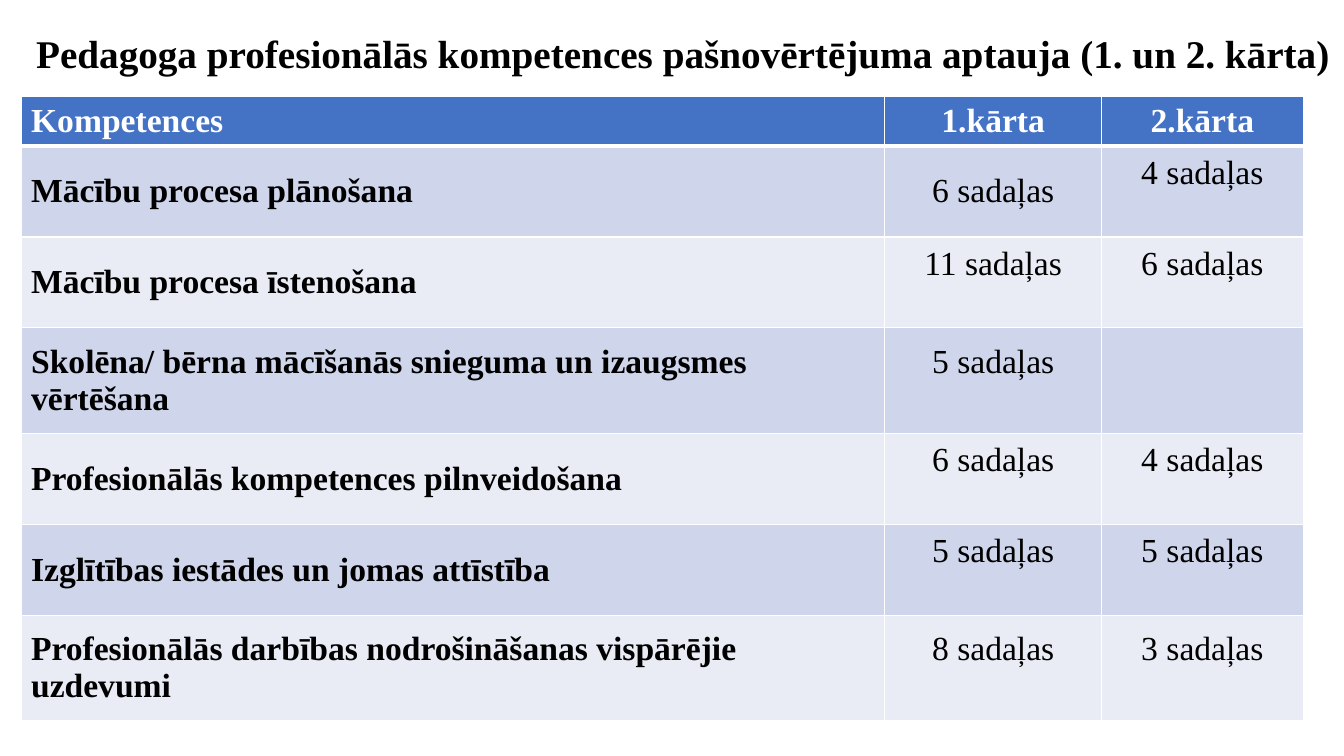
from lxml import etree
from pptx import Presentation
from pptx.dml.color import RGBColor
from pptx.enum.text import MSO_ANCHOR, MSO_AUTO_SIZE, PP_ALIGN
from pptx.oxml.ns import qn
from pptx.util import Cm, Pt

MID = MSO_ANCHOR.MIDDLE
LEFT, CENTER = PP_ALIGN.LEFT, PP_ALIGN.CENTER
FIXED = MSO_AUTO_SIZE.NONE

BLACK, WHITE, BLUE = "000000", "FFFFFF", "4472C4"
BANDS = "CFD5EA", "E9EBF5"
COLS = 21.77, 5.46, 5.08
HEAD, LOW, TALL = 1.26, 2.29, 2.66
LIFT = 1.07  # bottom margin that raises a count above the row's middle

ROWS = [
    ("Kompetences", "1.kārta", "2.kārta"),
    ("Mācību procesa plānošana", "6 sadaļas", "4 sadaļas"),
    ("Mācību procesa īstenošana", "11 sadaļas", "6 sadaļas"),
    ("Skolēna/ bērna mācīšanās snieguma un izaugsmes vērtēšana", "5 sadaļas", ""),
    ("Profesionālās kompetences pilnveidošana", "6 sadaļas", "4 sadaļas"),
    ("Izglītības iestādes un jomas attīstība", "5 sadaļas", "5 sadaļas"),
    ("Profesionālās darbības nodrošināšanas vispārējie uzdevumi",
     "8 sadaļas", "3 sadaļas"),
]
HEIGHTS = HEAD, LOW, LOW, TALL, LOW, LOW, TALL


def rgb(code):
    return RGBColor.from_string(code)


class Deck:
    font = "Times New Roman"

    def __init__(self):
        self.prs = Presentation()
        self.prs.slide_width, self.prs.slide_height = Cm(33.87), Cm(19.05)
        self.slide = self.prs.slides.add_slide(self.prs.slide_layouts[5])

    def label(self, frame, text, size, color, bold, align):
        frame.text = text
        para = frame.paragraphs[0]
        para.alignment = align
        for run in para.runs:
            font = run.font
            font.name, font.size, font.bold = self.font, Pt(size), bold
            font.color.rgb = rgb(color)

    def title(self, text, x, y, w, h):
        box = self.slide.shapes.title
        box.left, box.top, box.width, box.height = Cm(x), Cm(y), Cm(w), Cm(h)
        frame = box.text_frame
        frame.word_wrap, frame.auto_size = False, FIXED
        frame.vertical_anchor = MID
        self.label(frame, text, 28, BLACK, True, CENTER)

    def edge(self, cell, base):
        """Draw white borders round a cell, the bottom one base points wide."""
        props = cell._tc.get_or_add_tcPr()
        for i, side in enumerate("LRTB"):
            width = base if side == "B" else 1
            line = etree.Element(qn("a:ln" + side), w=str(Pt(width)))
            fill = etree.SubElement(line, qn("a:solidFill"))
            etree.SubElement(fill, qn("a:srgbClr"), val=WHITE)
            props.insert(i, line)

    def cell(self, cell, text, r, c):
        head = r == 0
        cell.vertical_anchor = MID
        cell.fill.solid()
        cell.fill.fore_color.rgb = rgb(BLUE if head else BANDS[(r - 1) % 2])
        self.edge(cell, 3 if head else 1)
        if c and not head and (r, c) != (1, 1):
            cell.margin_bottom = Cm(LIFT)
        self.label(cell.text_frame, text, 24, WHITE if head else BLACK,
                   head or c == 0, CENTER if c else LEFT)

    def table(self, rows, x, y, cols, heights):
        grid = self.slide.shapes.add_table(
            len(rows), len(cols), Cm(x), Cm(y),
            Cm(sum(cols)), Cm(sum(heights))).table
        for col, w in zip(grid.columns, cols):
            col.width = Cm(w)
        for r, (row, h) in enumerate(zip(rows, heights)):
            grid.rows[r].height = Cm(h)
            for c, text in enumerate(row):
                self.cell(grid.cell(r, c), text, r, c)


def main():
    deck = Deck()
    deck.title("Pedagoga profesionālās kompetences pašnovērtējuma aptauja "
               "(1. un 2. kārta)", 0.53, 0.6, 33.35, 1.45)
    deck.table(ROWS, 0.53, 2.42, COLS, HEIGHTS)
    deck.prs.save("out.pptx")


if __name__ == "__main__":
    main()
